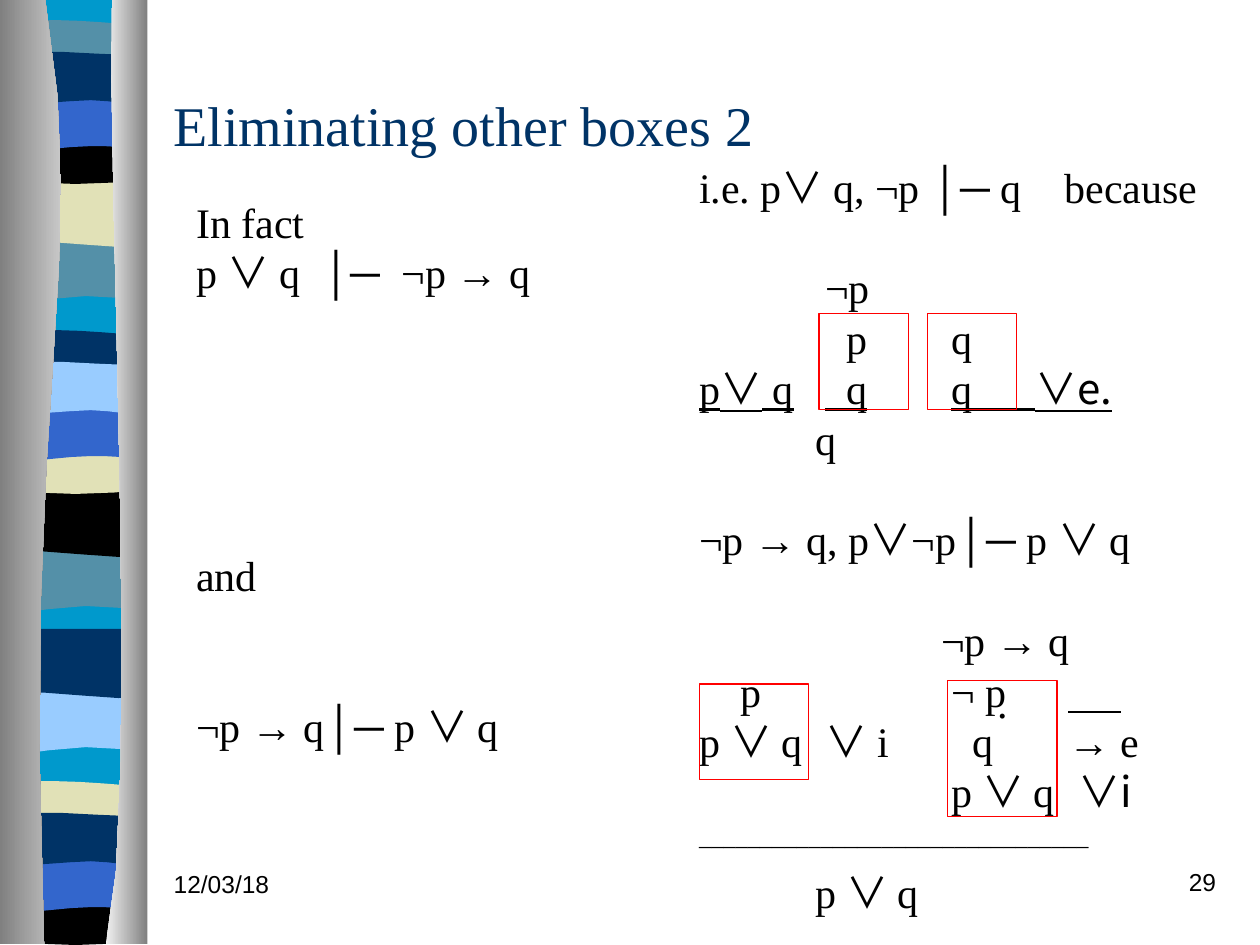
from lxml import etree
from pptx import Presentation
from pptx.dml.color import RGBColor
from pptx.enum.shapes import MSO_SHAPE
from pptx.enum.text import MSO_ANCHOR, PP_ALIGN
from pptx.oxml.ns import qn
from pptx.util import Inches, Pt

RECT = MSO_SHAPE.RECTANGLE
MIDDLE, TOP = MSO_ANCHOR.MIDDLE, MSO_ANCHOR.TOP
LEFT, CENTER, RIGHT = PP_ALIGN.LEFT, PP_ALIGN.CENTER, PP_ALIGN.RIGHT


class Theme:
    body, math, small = "Times New Roman", "Noto Sans CJK JP", "Arial"
    title_pt, text_pt, foot_pt = 32, 24, 14
    pitch = 28.8
    ink, navy, red = "000000", "003366", "FF0000"
    sea, teal, sand = "0099CC", "5490A8", "E1E1B7"
    blue, sky = "3366CC", "99CCFF"
    dark, mid, light = "808080", "C8C8C8", "F0F0F0"


def draw(path, drop=0, cuts=4):
    """Outline through points (x, y) and Bezier curves (x1, y1, x2, y2, x, y)."""
    pts = [path[0]]
    for step in path[1:]:
        if len(step) == 2:
            pts.append(step)
            continue
        ends = [pts[-1], step[:2], step[2:4], step[4:]]
        for i in range(1, cuts + 1):
            t = i / cuts
            mix = ((1 - t) ** 3, 3 * t * (1 - t) ** 2, 3 * t * t * (1 - t), t ** 3)
            pts.append(tuple(sum(m * e[k] for m, e in zip(mix, ends)) for k in (0, 1)))
    # Stretch the waves to the full height of their control points
    goal = [y for step in path for y in step[1::2]]
    have = [y for _, y in pts]
    rate = (max(goal) - min(goal)) / (max(have) - min(have))
    base = min(goal) + drop
    pts = [(Inches(x), Inches(base + (y - min(have)) * rate)) for x, y in pts]
    form = slide.shapes.build_freeform(*pts[0], scale=1.0)
    form.add_line_segments(pts[1:], close=True)
    shape = form.convert_to_shape()
    shape.shadow.inherit = False
    shape.line.fill.background()
    return shape


def style(run, face, size, color):
    run.font.name = face
    run.font.size = Pt(size)
    run.font.color.rgb = RGBColor.from_string(color)


deck = Presentation()
deck.slide_width, deck.slide_height = Inches(10), Inches(7.5)
slide = deck.slides.add_slide(deck.slide_layouts[6])

# Striped side band: six wavy outlines, repeated down the slide
a, b = 0.05, 1.14
waves = {
    "A": [(b, 1.85), (b, 2.32), (0.39, 2.24, 0.24, 2.4, a, 2.32), (a, 1.85)],
    "B": [(b, 1.41), (b, 1.88), (0.96, 1.96, 0.39, 1.82, a, 1.88), (a, 1.41)],
    "C": [(b, 0.21), (b, 0.45), (0.96, 0.5, 0.24, 0.5, a, 0.45), (a, 0.21),
          (0.12, 0.16, 0.29, 0.17, 0.47, 0.17), (0.65, 0.17, 1, 0.2, b, 0.21)],
    "D": [(b, 1.08), (b, 1.4), (0.96, 1.46, 0.24, 1.46, a, 1.4), (a, 1.08),
          (0.72, 1.13, 0.91, 1.08, b, 1.08)],
    "E": [(b, 0.74), (b, 1.21), (0.97, 1.16, 0.9, 1.16, 0.72, 1.16),
          (0.54, 1.16, 0.22, 1.21, a, 1.21), (a, 0.74)],
    "F": [(b, 0.46), (b, 0.77), (1.07, 0.82, 0.9, 0.77, 0.72, 0.77),
          (0.54, 0.77, 0.17, 0.82, a, 0.77), (a, 0.46),
          (0.21, 0.41, 0.79, 0.46, 0.97, 0.46)],
}
T = Theme
sets = [
    (0, "ABCDEF", [T.teal, T.sand, T.teal, T.ink, T.blue, T.navy]),
    (2.46, "ABCDEF", [T.teal, T.ink, T.navy, T.sand, T.blue, T.sky]),
    (3.58, "AB", [T.sky, T.navy]),
    (6.04, "CDEF", [T.sand, T.ink, T.blue, T.navy]),
]
bands = [([(a, 0), (b, 0), (b, 7.47), (a, 7.47)], 0, T.sea)]
for drop, keys, hues in sets:
    bands += [(waves[key], drop, hue) for key, hue in zip(keys, hues)]
for path, drop, hue in bands:
    band = draw(path, drop)
    band.fill.solid()
    band.fill.fore_color.rgb = RGBColor.from_string(hue)

# Curved grey edges on both sides of the band
edges = [
    ([(0.36, 0), (0.72, 2.16, 0.17, 2.96, 0.35, 7.49), (0, 7.49), (0, 0)],
     T.dark, T.mid),
    ([(0.89, 0), (0.84, 1.25, 1.12, 6.46, 0.84, 7.49), (1.17, 7.49), (1.17, 0)],
     T.light, T.dark),
]
for path, *hues in edges:
    fill = draw(path, cuts=8).fill
    fill.gradient()
    fill.gradient_angle = 0
    for stop, hue in zip(fill.gradient_stops, hues):
        stop.color.rgb = RGBColor.from_string(hue)

# Title, date and page number
labels = [
    ("12/03/18", (1.28, 6.85, 2.08, 0.5), T.small, T.foot_pt, T.ink, LEFT, TOP),
    ("29", (7.67, 6.83, 2.08, 0.5), T.small, T.foot_pt, T.ink, RIGHT, TOP),
    ("Eliminating other boxes 2", (1.28, 0.5, 8.5, 0.97),
     T.body, T.title_pt, T.navy, LEFT, MIDDLE),
]
for text, spot, face, size, hue, align, anchor in labels:
    frame = slide.shapes.add_textbox(*map(Inches, spot)).text_frame
    frame.word_wrap = True
    frame.vertical_anchor = anchor
    frame.text = text
    para = frame.paragraphs[0]
    para.alignment = align
    if anchor == TOP:
        para.space_before = Pt(size / 2)
    style(para.runs[0], face, size, hue)

# Proof text: (lines skipped above, tab stops, runs)
# "|" parts the runs, "~" underlines one, "^" raises one
claims = [
    (0, [], "In fact"),
    (0, [], "p |∨ |q  │─  ¬p → q"),
    (5, [], "and"),
    (2, [], "¬p → q│─ p |∨ |q"),
]
proofs = [
    (0, [2.9], "i.e. p|∨ |q, ¬p │─ q\tbecause"),
    (1, [1], "\t¬p"),
    (0, [1.17, 2], "\tp\tq"),
    (0, [1, 2], "~p|~∨|~ q|\t|~  q|\t|~q      |~∨e."),
    (0, [0.92], "\tq"),
    (1, [], "¬p → q, p|∨|¬p│─ p |∨ |q"),
    (1, [1.92], "\t¬p → q"),
    (0, [0.33, 2, 2.93], "\tp\t¬ p\t|~     "),
    (0, [1, 2.17, 2.93], "p |∨ |q\t|∨| i\tq\t→ e"),
    (0, [2, 3.01], "\tp |∨ |q\t|∨i"),
    (0, [], "^" + "_" * 32),
    (0, [0.92], "\tp |∨ |q"),
]
columns = [(claims, (1.46, 1.51, 3, 4.95)), (proofs, (5.45, 1.23, 4.31, 6.43))]
for lines, spot in columns:
    frame = slide.shapes.add_textbox(*map(Inches, spot)).text_frame
    frame.word_wrap = False
    for n, (skip, tabs, text) in enumerate(lines):
        para = frame.add_paragraph() if n else frame.paragraphs[0]
        para.line_spacing = Pt(T.pitch)
        para.space_before = Pt(skip * T.pitch)
        if tabs:
            stops = etree.SubElement(para._p.get_or_add_pPr(), qn("a:tabLst"))
            for tab in tabs:
                etree.SubElement(stops, qn("a:tab"), pos=str(Inches(tab)), algn="l")
        for part in text.split("|"):
            run = para.add_run()
            run.text = part.lstrip("~^")
            face = T.math if "∨" in part else T.body
            style(run, face, T.text_pt, T.ink)
            rpr = run._r.get_or_add_rPr()
            etree.SubElement(rpr, qn("a:ea"), typeface=face)
            if part.startswith("~"):
                run.font.underline = True
            if part.startswith("^"):
                rpr.set("baseline", "30000")

# Red assumption boxes
boxes = [(6.5, 2.49, 0.71, 0.76), (7.36, 2.49, 0.71, 0.76),
         (5.55, 5.43, 0.87, 0.76), (7.52, 5.4, 0.87, 1.08)]
for spot in boxes:
    box = slide.shapes.add_shape(RECT, *map(Inches, spot))
    box.shadow.inherit = False
    box.fill.background()
    box.line.color.rgb = RGBColor.from_string(T.red)
    box.line.width = Pt(0.75)

# Dot inside the last box
frame = box.text_frame
frame.vertical_anchor = TOP
frame.text = "."
para = frame.paragraphs[0]
para.alignment = CENTER
para.line_spacing = 0.8
style(para.runs[0], T.body, T.text_pt, T.ink)

deck.save("out.pptx")
